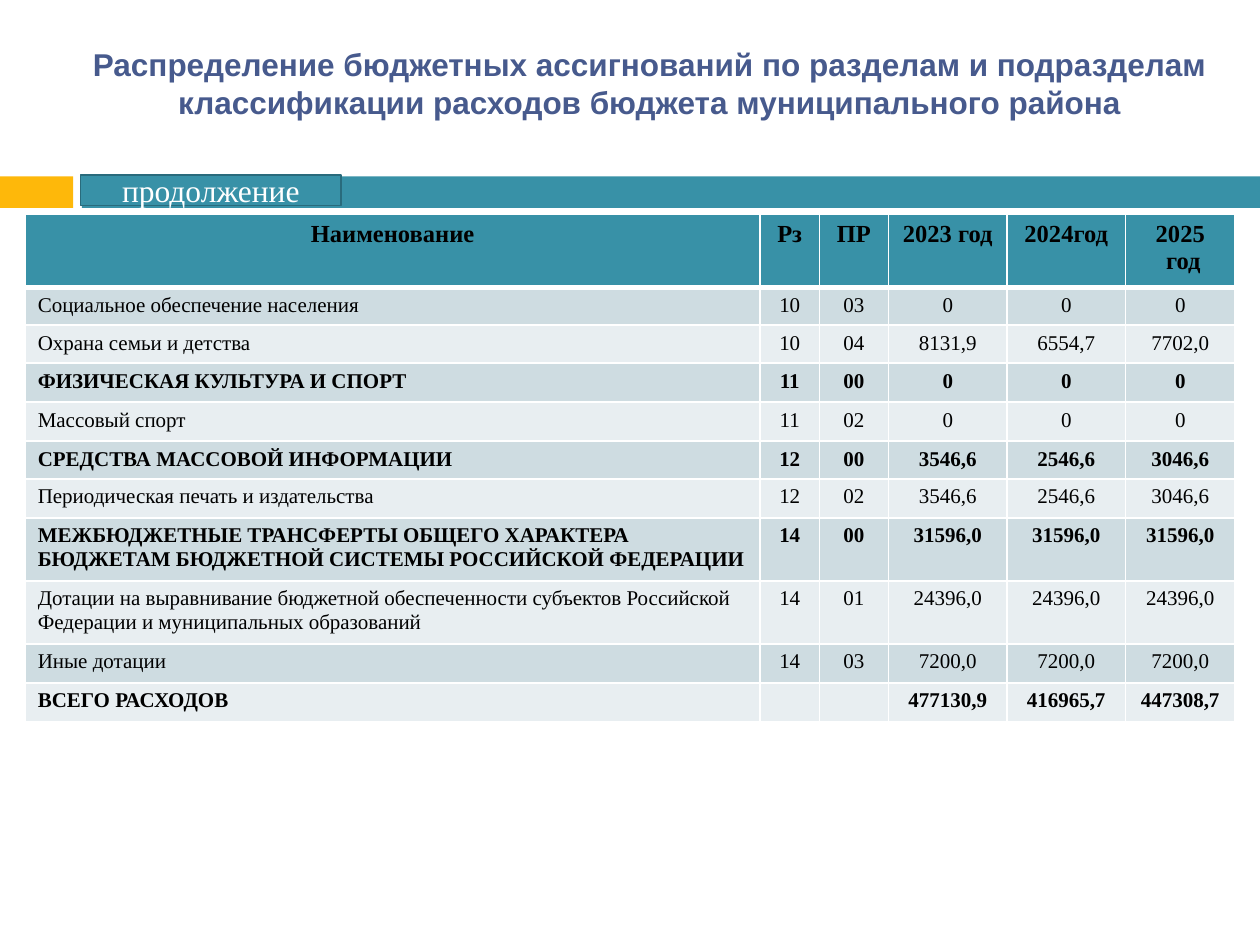
"""Build a slide with a table of budget spending by section."""
from lxml.etree import SubElement as Sub
from pptx import Presentation as Deck
from pptx.dml.color import RGBColor as RGB
from pptx.enum.shapes import MSO_SHAPE as Shape
from pptx.enum.text import MSO_ANCHOR as Anchor, PP_ALIGN as Align
from pptx.oxml.ns import qn
from pptx.util import Pt

HUES = {
    "teal": "3891A7", "edge": "296B7C", "gold": "FEB80A", "title": "475A8D",
    "dark": "CEDCE1", "light": "E8EEF1", "white": "FFFFFF", "black": "000000",
}
WIDTHS = [420, 33.8, 39.6, 67.7, 67.7, 62.6]
HEIGHTS = [41.8, 15.1, 15.8, 22.3, 22.3, 19.4] + [22.3] * 5
HEAD = ["Наименование", "Рз", "ПР", "2023 год", "2024год", "2025\n год"]
ROWS = [
    ["Социальное обеспечение населения", "10", "03", "0", "0", "0"],
    ["Охрана семьи и детства", "10", "04", "8131,9", "6554,7", "7702,0"],
    ["ФИЗИЧЕСКАЯ КУЛЬТУРА И СПОРТ", "11", "00", "0", "0", "0"],
    ["Массовый спорт", "11", "02", "0", "0", "0"],
    ["СРЕДСТВА МАССОВОЙ ИНФОРМАЦИИ", "12", "00", "3546,6", "2546,6", "3046,6"],
    ["Периодическая печать и издательства", "12", "02", "3546,6", "2546,6", "3046,6"],
    ["МЕЖБЮДЖЕТНЫЕ ТРАНСФЕРТЫ ОБЩЕГО ХАРАКТЕРА БЮДЖЕТАМ БЮДЖЕТНОЙ СИСТЕМЫ "
     "РОССИЙСКОЙ ФЕДЕРАЦИИ", "14", "00", "31596,0", "31596,0", "31596,0"],
    ["Дотации на выравнивание бюджетной обеспеченности субъектов Российской "
     "Федерации и муниципальных образований", "14", "01", "24396,0", "24396,0", "24396,0"],
    ["Иные дотации", "14", "03", "7200,0", "7200,0", "7200,0"],
    ["ВСЕГО РАСХОДОВ", "", "", "477130,9", "416965,7", "447308,7"],
]


def write(frame, text, size=12, bold=False, hue="black",
          face="Times New Roman", align=Align.CENTER):
    frame.word_wrap = True
    frame.text = text
    for par in frame.paragraphs:
        par.alignment = align
        for font in [par.font] + [run.font for run in par.runs]:
            font.name, font.size, font.bold = face, Pt(size), bold
            font.color.rgb = RGB.from_string(HUES[hue])
        if not par.runs:
            Sub(par._p, qn("a:endParaRPr"), sz=str(size * 100))


class Page:
    def __init__(self, deck, hues):
        self.hues = hues
        self.slide = deck.slides.add_slide(deck.slide_layouts[6])

    def paint(self, fill, hue):
        fill.solid()
        fill.fore_color.rgb = RGB.from_string(self.hues[hue])

    def bar(self, box, hue, edge=None):
        bar = self.slide.shapes.add_shape(Shape.RECTANGLE, *map(Pt, box))
        bar.shadow.inherit = False
        self.paint(bar.fill, hue)
        if edge:
            self.paint(bar.line.fill, edge)
            bar.line.width = Pt(0)
        else:
            bar.line.fill.background()
        return bar

    def label(self, box, text, **style):
        frame = self.slide.shapes.add_textbox(*map(Pt, box)).text_frame
        frame.vertical_anchor = Anchor.MIDDLE
        write(frame, text, **style)

    def border(self, cell, low):
        props = cell._tc.get_or_add_tcPr()
        for side, width in zip("LRTB", (1, 1, 1, low)):
            line = Sub(props, qn(f"a:ln{side}"), w=str(Pt(width)))
            Sub(Sub(line, qn("a:solidFill")), qn("a:srgbClr"), val=self.hues["white"])

    def table(self, left, top, head, rows):
        data = [head] + rows
        grid = self.slide.shapes.add_table(
            len(data), len(head), Pt(left), Pt(top),
            Pt(sum(WIDTHS)), Pt(sum(HEIGHTS))).table
        for col, width in zip(grid.columns, WIDTHS):
            col.width = Pt(width)
        for r, (row, tall) in enumerate(zip(data, HEIGHTS)):
            grid.rows[r].height = Pt(tall)
            top_row = r == 0
            hue = "teal" if top_row else "dark" if r % 2 else "light"
            for c, text in enumerate(row):
                cell = grid.cell(r, c)
                self.border(cell, 3 if top_row else 1)
                self.paint(cell.fill, hue)
                write(cell.text_frame, text, size=14 if top_row else 12,
                      bold=top_row or row[0].isupper(),
                      align=Align.CENTER if top_row or c else Align.LEFT)


def main():
    deck = Deck()
    deck.slide_width, deck.slide_height = Pt(720), Pt(540)
    page = Page(deck, HUES)
    page.bar((0, 100.8, 41.8, 18), "gold")
    page.bar((46.8, 100.8, 673.2, 18), "teal")
    page.label((31, 18, 680.4, 59),
               "Распределение бюджетных ассигнований по разделам и подразделам "
               "классификации расходов бюджета муниципального района",
               size=18, bold=True, hue="title", face="Arial")
    page.table(14.4, 122.4, HEAD, ROWS)
    tag = page.bar((46, 100, 149, 17.3), "teal", "edge")
    tag.text_frame.vertical_anchor = Anchor.MIDDLE
    write(tag.text_frame, "продолжение", size=18, hue="white")
    deck.save("out.pptx")


if __name__ == "__main__":
    main()
